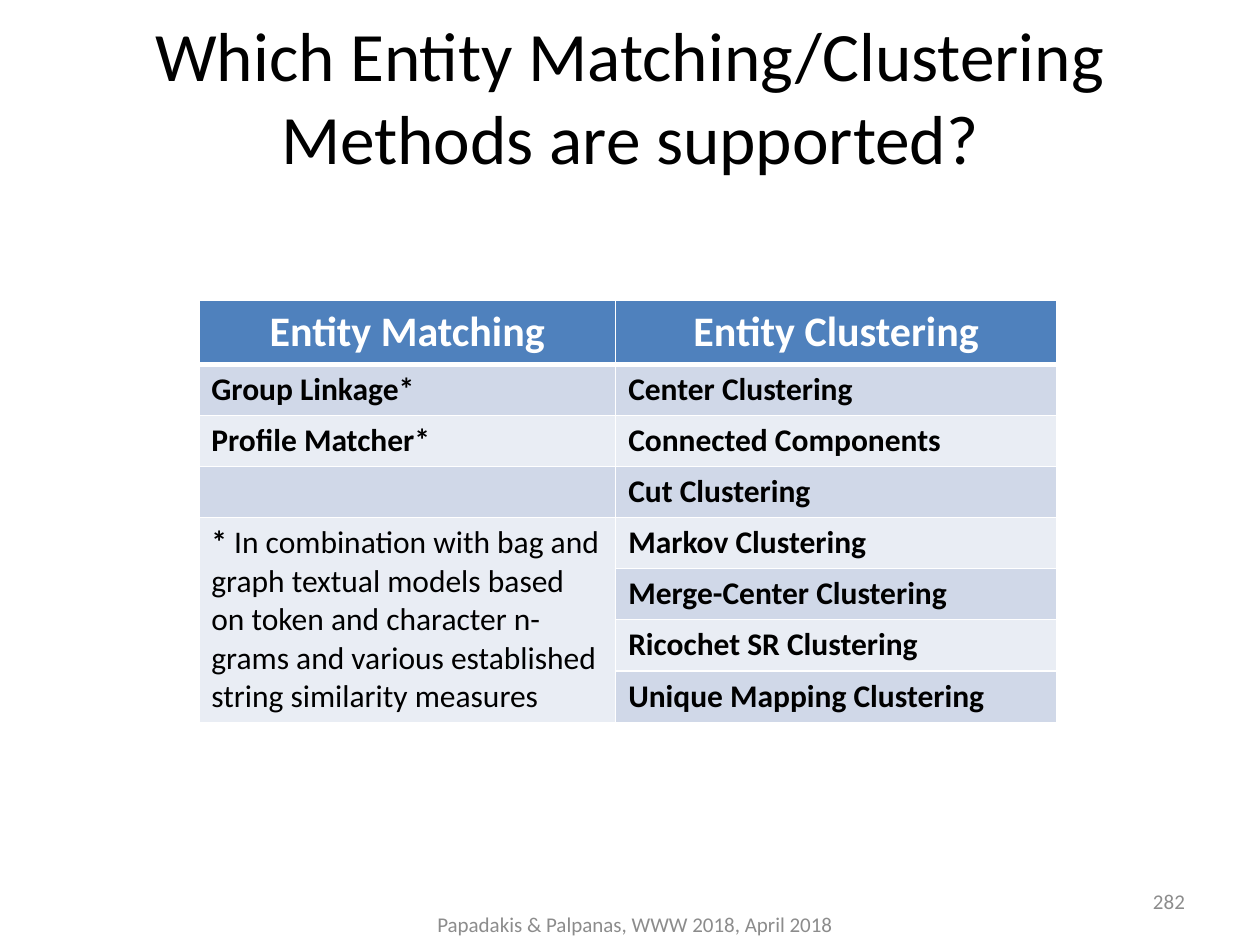
from lxml.etree import SubElement
from pptx import Presentation
from pptx.dml.color import RGBColor
from pptx.enum.text import MSO_ANCHOR as Anchor, MSO_AUTO_SIZE as AutoSize, PP_ALIGN as Align
from pptx.oxml.ns import qn
from pptx.util import Pt

COLORS = {
    "black": "000000",
    "white": "FFFFFF",
    "gray": "8C8C8C",
    "header": "4F81BD",
    "dark_band": "D0D8E8",
    "light_band": "E9EDF4",
}
HEADERS = ["Entity Matching", "Entity Clustering"]
MATCHING = ["Group Linkage*", "Profile Matcher*"]
CLUSTERING = [
    "Center Clustering", "Connected Components", "Cut Clustering", "Markov Clustering",
    "Merge-Center Clustering", "Ricochet SR Clustering", "Unique Mapping Clustering",
]
NOTE = (" In combination with bag and graph textual models based on token and "
        "character n-grams and various established string similarity measures")
NOTE_ROW = 4


class SlideBuilder:
    font_name = "Calibri"

    def __init__(self, slide):
        self.slide = slide

    def style_font(self, font, size, color, bold=False):
        font.name = self.font_name
        font.size = Pt(size)
        font.bold = bold
        font.color.rgb = RGBColor.from_string(COLORS[color])

    def fill_text(self, shape, text, size, color, align):
        text_frame = shape.text_frame
        text_frame.text = text
        text_frame.word_wrap = True
        text_frame.auto_size = AutoSize.NONE
        text_frame.vertical_anchor = Anchor.MIDDLE
        paragraph = text_frame.paragraphs[0]
        paragraph.alignment = align
        self.style_font(paragraph.runs[0].font, size, color)

    def title(self, text, left, top, width, height):
        shape = self.slide.shapes.title
        shape.left, shape.top = Pt(left), Pt(top)
        shape.width, shape.height = Pt(width), Pt(height)
        self.fill_text(shape, text, 39.6, "black", Align.CENTER)

    def footer(self, text, left, top, width, height, align):
        shape = self.slide.shapes.add_textbox(Pt(left), Pt(top), Pt(width), Pt(height))
        self.fill_text(shape, text, 12, "gray", align)

    def table(self, left, top, column_widths, row_heights):
        table = self.slide.shapes.add_table(
            len(row_heights), len(column_widths), Pt(left), Pt(top),
            Pt(sum(column_widths)), Pt(sum(row_heights))).table
        for column, width in zip(table.columns, column_widths):
            column.width = Pt(width)
        for row, height in zip(table.rows, row_heights):
            row.height = Pt(height)
        return table

    def cell(self, cell, text, size, color, fill, align=Align.LEFT, bottom=1):
        cell.text = text
        paragraph = cell.text_frame.paragraphs[0]
        paragraph.alignment = align
        self.style_font(paragraph.font, size, color, bold=True)
        for run in paragraph.runs:
            self.style_font(run.font, size, color, bold=True)
        self.borders(cell, bottom)
        cell.fill.solid()
        cell.fill.fore_color.rgb = RGBColor.from_string(COLORS[fill])

    def borders(self, cell, bottom):
        properties = cell._tc.get_or_add_tcPr()
        for side, width in {"L": 1, "R": 1, "T": 1, "B": bottom}.items():
            line = SubElement(properties, qn(f"a:ln{side}"), w=str(Pt(width)))
            solid = SubElement(line, qn("a:solidFill"))
            SubElement(solid, qn("a:srgbClr"), val=COLORS["white"])


def main():
    presentation = Presentation()
    presentation.slide_width, presentation.slide_height = Pt(720), Pt(540)
    slide = presentation.slides.add_slide(presentation.slide_layouts[5])
    builder = SlideBuilder(slide)

    # Title
    builder.title("Which Entity Matching/Clustering Methods are supported?", 14, 9.5, 692, 90)

    # Table of methods, with alternating bands
    table = builder.table(113.6, 171.6, [238.2, 252], [36] + [29.2] * len(CLUSTERING))
    for column, text in enumerate(HEADERS):
        builder.cell(table.cell(0, column), text, 24, "white", "header", Align.CENTER, bottom=3)
    for row, clustering in enumerate(CLUSTERING, start=1):
        matching = MATCHING[row - 1] if row <= len(MATCHING) else ""
        band = "dark_band" if row % 2 else "light_band"
        for column, text in enumerate([matching, clustering]):
            builder.cell(table.cell(row, column), text, 18, "black", band)

    # Note in the merged cell
    note = table.cell(NOTE_ROW, 0)
    note.merge(table.cell(len(CLUSTERING), 0))
    paragraph = note.text_frame.paragraphs[0]
    for text, bold in [("*", True), (NOTE, False)]:
        run = paragraph.add_run()
        run.text = text
        builder.style_font(run.font, 18, "black", bold)

    # Footer and slide number
    builder.footer("Papadakis & Palpanas, WWW 2018, April 2018", 235.4, 513.4, 255, 28.8, Align.CENTER)
    builder.footer("282", 516.2, 500.4, 168, 28.8, Align.RIGHT)

    presentation.save("out.pptx")


if __name__ == "__main__":
    main()
